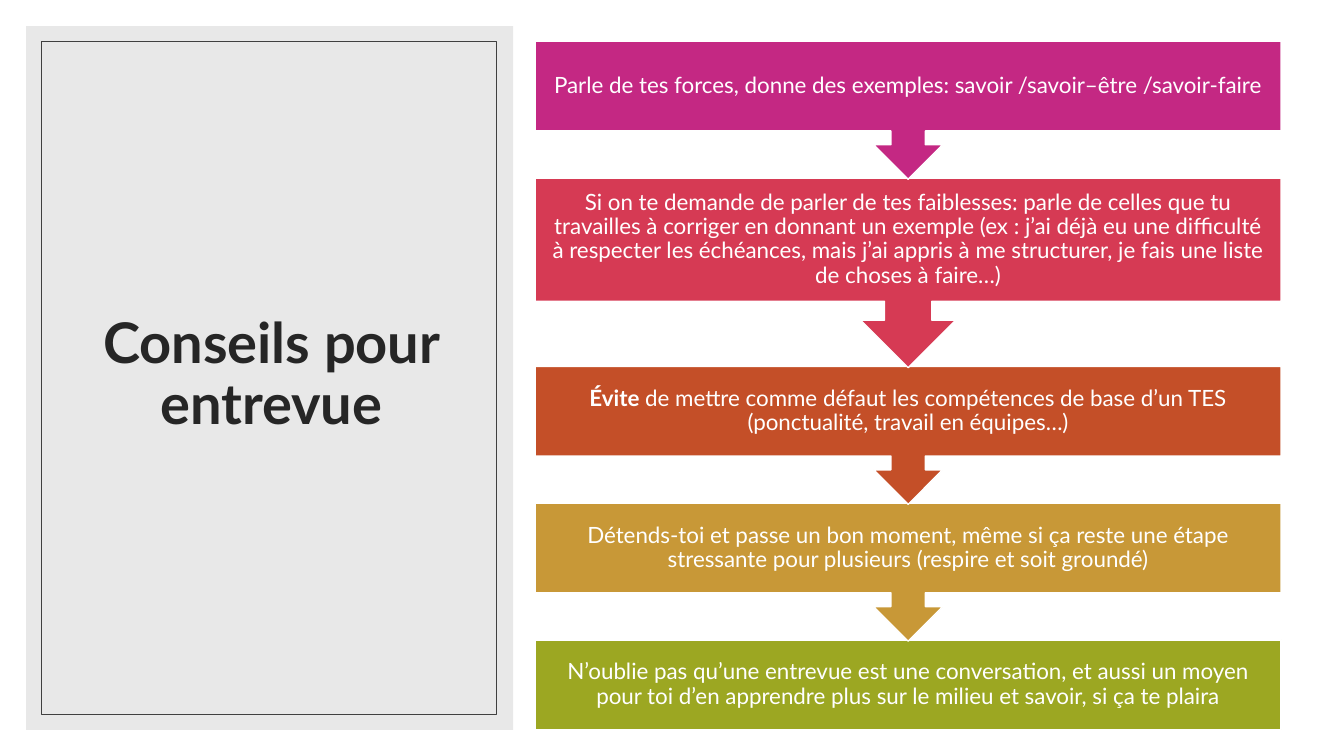
"""Build the interview advice slide: a title panel beside a chain of five tips."""
from dataclasses import dataclass

from lxml import etree
from pptx import Presentation
from pptx.dml.color import RGBColor
from pptx.enum.shapes import MSO_SHAPE
from pptx.enum.text import MSO_ANCHOR, PP_ALIGN
from pptx.oxml.ns import qn
from pptx.shapes.autoshape import Shape
from pptx.slide import Slide
from pptx.text.text import TextFrame
from pptx.util import Pt

RECTANGLE = MSO_SHAPE.RECTANGLE
DOWN_CALLOUT = MSO_SHAPE.DOWN_ARROW_CALLOUT
MIDDLE = MSO_ANCHOR.MIDDLE
CENTER = PP_ALIGN.CENTER

WHITE = RGBColor(0xFF, 0xFF, 0xFF)
PANEL_GREY = RGBColor(0xD9, 0xD9, 0xD9)
FRAME_GREY = RGBColor(0x40, 0x40, 0x40)
TITLE_GREY = RGBColor(0x26, 0x26, 0x26)
MAGENTA = RGBColor(0xC4, 0x28, 0x83)
RED = RGBColor(0xD6, 0x3A, 0x54)
ORANGE = RGBColor(0xC4, 0x4F, 0x28)
GOLD = RGBColor(0xC8, 0x98, 0x37)
GREEN = RGBColor(0x9C, 0xA7, 0x22)

FONT = "Lato"
TIP_LEFT, TIP_WIDTH, FIRST_TIP_TOP = 382.3, 532.8, 29.5
TIP_OVERLAP = 0.9
TIP_INSET = 8.96


@dataclass(frozen=True)
class Box:
    """A place on the slide, in points."""
    left: float
    top: float
    width: float
    height: float


@dataclass(frozen=True)
class Tip:
    """One step of advice, with an optional bold opening."""
    text: str
    color: RGBColor
    height: float = 98.6
    bold_start: str = ""
    geometry: MSO_SHAPE = DOWN_CALLOUT


TIPS = [
    Tip("Parle de tes forces, donne des exemples: savoir /savoir–être /savoir-faire", MAGENTA),
    Tip("Si on te demande de parler de tes faiblesses: parle de celles que tu travailles à "
        "corriger en donnant un exemple (ex : j’ai déjà eu une difficulté à respecter les "
        "échéances, mais j’ai appris à me structurer, je fais une liste de choses à faire…)",
        RED, height=135.4),
    Tip(" de mettre comme défaut les compétences de base d’un TES "
        "(ponctualité, travail en équipes…)", ORANGE, bold_start="Évite"),
    Tip("Détends-toi et passe un bon moment, même si ça reste une étape stressante "
        "pour plusieurs (respire et soit groundé)", GOLD),
    Tip("N’oublie pas qu’une entrevue est une conversation, et aussi un moyen pour toi "
        "d’en apprendre plus sur le milieu et savoir, si ça te plaira",
        GREEN, height=64.1, geometry=RECTANGLE),
]


def add_block(slide: Slide, box: Box, geometry: MSO_SHAPE, fill: RGBColor | None = None,
              line: RGBColor | None = None, line_width: float = 1) -> Shape:
    """Add a flat preset shape with an optional fill and outline."""
    block = slide.shapes.add_shape(geometry, Pt(box.left), Pt(box.top),
                                   Pt(box.width), Pt(box.height))
    block.shadow.inherit = False
    if fill is None:
        block.fill.background()
    else:
        block.fill.solid()
        block.fill.fore_color.rgb = fill
    if line is None:
        block.line.fill.background()
    else:
        block.line.color.rgb = line
        block.line.width = Pt(line_width)
    return block


def write_centered(frame: TextFrame, text: str, size: float, color: RGBColor,
                   bold_start: str = "") -> None:
    """Write one centred paragraph, its opening words in bold."""
    frame.word_wrap = True
    frame.vertical_anchor = MIDDLE
    paragraph = frame.paragraphs[0]
    paragraph.alignment = CENTER
    paragraph.line_spacing = 0.9
    for words, bold in ((bold_start, True), (text, False)):
        if words:
            run = paragraph.add_run()
            run.text = words
            run.font.name = FONT
            run.font.size = Pt(size)
            run.font.bold = bold
            run.font.color.rgb = color


def add_title_panel(slide: Slide) -> None:
    """Draw the translucent panel, its title and its inner frame."""
    panel = add_block(slide, Box(18.7, 18.7, 347.8, 502.6), RECTANGLE, fill=PANEL_GREY)
    panel_color = panel.fill._xPr.find(".//" + qn("a:srgbClr"))
    etree.SubElement(panel_color, qn("a:alpha")).set("val", "60000")
    title = slide.shapes.add_textbox(Pt(45.4), Pt(43.9), Pt(296.6), Pt(449.3))
    write_centered(title.text_frame, "", 40, TITLE_GREY, bold_start="Conseils pour entrevue")
    add_block(slide, Box(29.5, 29.5, 324.7, 481), RECTANGLE, line=FRAME_GREY, line_width=0.5)


def add_tip(slide: Slide, tip: Tip, top: float) -> None:
    """Draw one tip at the given height."""
    block = add_block(slide, Box(TIP_LEFT, top, TIP_WIDTH, tip.height), tip.geometry,
                      fill=tip.color, line=WHITE)
    frame = block.text_frame
    frame.margin_left = frame.margin_right = Pt(TIP_INSET)
    frame.margin_top = frame.margin_bottom = Pt(TIP_INSET)
    write_centered(frame, tip.text, 16, WHITE, tip.bold_start)


def main() -> None:
    """Build and save the slide."""
    deck = Presentation()
    deck.slide_width, deck.slide_height = Pt(960), Pt(540)
    slide = deck.slides.add_slide(deck.slide_layouts[6])
    add_title_panel(slide)
    bottom = FIRST_TIP_TOP + sum(tip.height - TIP_OVERLAP for tip in TIPS)
    for tip in reversed(TIPS):
        bottom -= tip.height - TIP_OVERLAP
        add_tip(slide, tip, bottom)
    deck.save("out.pptx")


if __name__ == "__main__":
    main()
